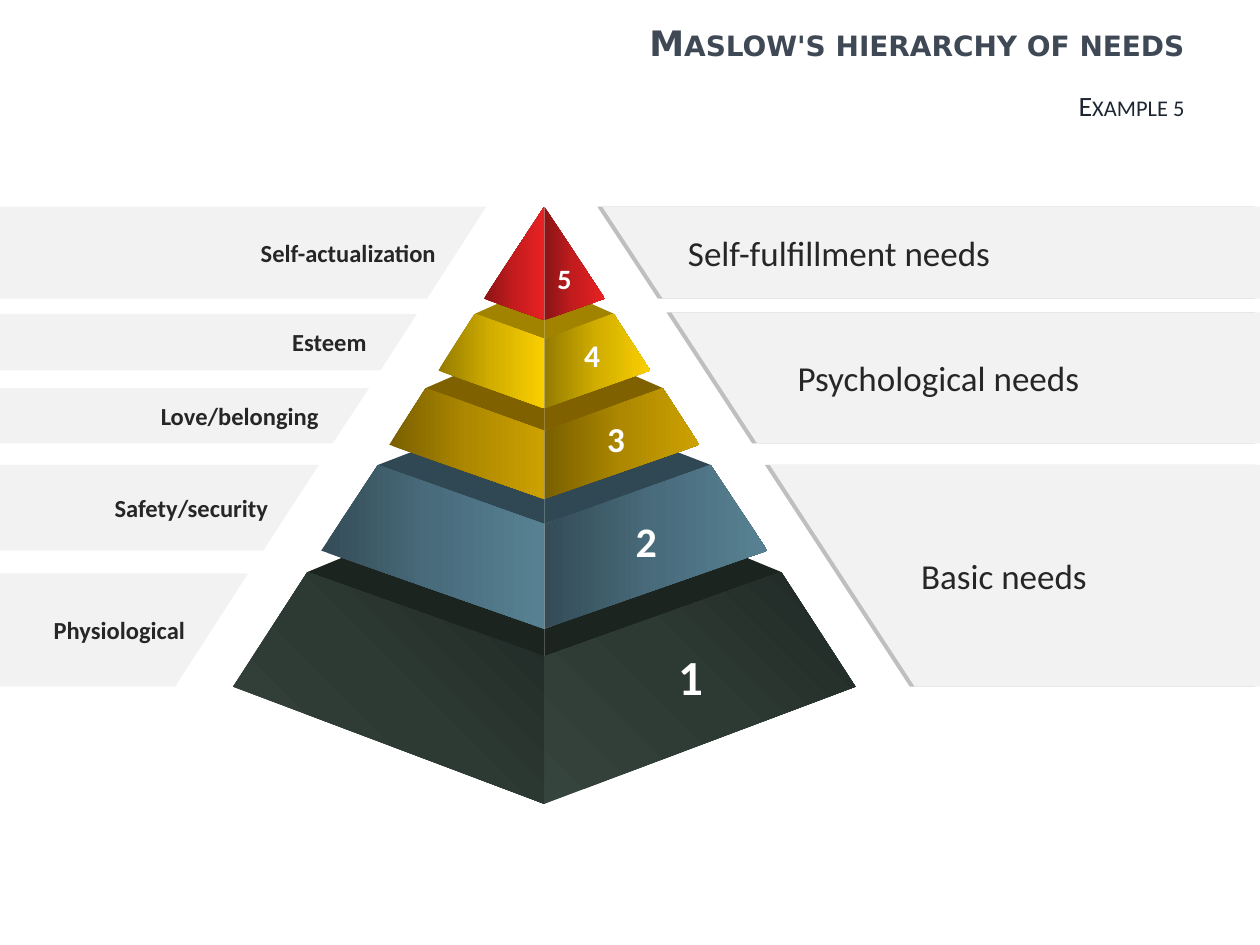
from lxml.etree import SubElement
from pptx import Presentation
from pptx.dml.color import RGBColor as Rgb
from pptx.enum.text import MSO_ANCHOR as Anchor, PP_ALIGN as Align
from pptx.oxml.ns import qn

PX = 9144
AXIS = 432
WHITE = Rgb(0xFF, 0xFF, 0xFF)
PANEL = Rgb(0xF2, 0xF2, 0xF2)
EDGE = Rgb(0xBF, 0xBF, 0xBF)
INK = Rgb(0x26, 0x26, 0x26)
TITLE = Rgb(0x3F, 0x48, 0x55)
SUBTITLE = Rgb(0x1D, 0x26, 0x31)
RED = Rgb(0x8A, 0x14, 0x15), Rgb(0xC4, 0x1C, 0x1E), Rgb(0xE9, 0x21, 0x23)
YELLOW = Rgb(0x94, 0x7B, 0x00), Rgb(0xD2, 0xAE, 0x00), Rgb(0xF9, 0xCF, 0x00)
GOLD = Rgb(0x79, 0x5F, 0x00), Rgb(0xAD, 0x88, 0x00), Rgb(0xCD, 0xA1, 0x00)
BLUE = Rgb(0x34, 0x4C, 0x57), Rgb(0x49, 0x6C, 0x7C), Rgb(0x57, 0x81, 0x93)
GREEN = Rgb(0x1F, 0x28, 0x24), Rgb(0x2D, 0x39, 0x33), Rgb(0x35, 0x44, 0x3C)
YELLOW_LID = Rgb(0xA1, 0x83, 0x00)
GOLD_LID = Rgb(0x7F, 0x61, 0x00)
BLUE_LID = Rgb(0x2F, 0x48, 0x53)
GREEN_LID = Rgb(0x1B, 0x24, 0x1F)


def write(frame, text, *, size, color, font="Calibri", bold=False,
          align=Align.LEFT, small_caps=False, left=10, right=10):
    """Fill a text frame with one formatted, vertically centred line."""
    frame.word_wrap = True
    frame.vertical_anchor = Anchor.MIDDLE
    frame.margin_left, frame.margin_right = left * PX, right * PX
    frame.margin_top = frame.margin_bottom = 5 * PX
    paragraph = frame.paragraphs[0]
    paragraph.alignment = align
    run = paragraph.add_run()
    run.text = text
    run.font.name, run.font.size, run.font.bold = font, size * 12700, bold
    run.font.color.rgb = color
    if small_caps:
        run.font._element.set("cap", "small")


class NeedsSlide:
    """Holds the slide and draws each kind of element on it."""

    def __init__(self, slide):
        self.slide = slide

    def title(self, text, box, **style):
        heading = self.slide.shapes.title
        heading.left, heading.top, heading.width, heading.height = (v * PX for v in box)
        write(heading.text_frame, text, **style)

    def label(self, text, box, **style):
        write(self.slide.shapes.add_textbox(*(v * PX for v in box)).text_frame, text, **style)

    def polygon(self, points, color=None):
        builder = self.slide.shapes.build_freeform(*points[0], scale=PX)
        builder.add_line_segments(points[1:], close=True)
        shape = builder.convert_to_shape()
        shape.shadow.inherit = False
        shape.line.fill.background()
        if color is not None:
            shape.fill.solid()
            shape.fill.fore_color.rgb = color
        return shape

    def panel(self, points, text, **style):
        write(self.polygon(points, PANEL).text_frame, text, color=INK, **style)

    def face(self, points, shades, corner_glow):
        fill = self.polygon(points).fill
        fill.gradient()
        gradient = fill._fill._gradFill
        for child in list(gradient):
            gradient.remove(child)
        stops = SubElement(gradient, qn("a:gsLst"))
        for position, shade in zip((0, 50000, 100000), shades):
            stop = SubElement(stops, qn("a:gs"), pos=str(position))
            SubElement(stop, qn("a:srgbClr"), val=str(shade))
        if corner_glow:
            way = SubElement(gradient, qn("a:path"), path="circle")
            SubElement(way, qn("a:fillToRect"), l="100000", b="100000")
        else:
            SubElement(gradient, qn("a:lin"), ang="0", scaled="0")

    def tier(self, ridge, shoulder, base, shades, lid=None, corner_glow=False):
        """Draw both faces of a tier and, given its colour, outline and ridge, the lid."""
        top, bottom = ridge
        for side in (-1, 1):
            def at(half, y):
                return AXIS + side * half, y
            if lid:
                color, back, peek = lid
                self.polygon([(AXIS, back), at(*peek), at(*shoulder), (AXIS, top)], color)
            corners = [(AXIS, top), at(*shoulder), at(*base), (AXIS, bottom)]
            self.face(corners if lid else corners[1:], shades, corner_glow)


def main():
    deck = Presentation()
    deck.slide_width, deck.slide_height = 1000 * PX, 750 * PX
    page = NeedsSlide(deck.slides.add_slide(deck.slide_layouts[5]))

    page.title("Maslow's hierarchy of needs", (319, 0, 631, 68), size=20, color=TITLE,
               font="DejaVu Sans", bold=True, align=Align.RIGHT, small_caps=True)
    page.label("Example 5", (319, 68, 631, 31), size=16, color=SUBTITLE,
               align=Align.RIGHT, small_caps=True)

    groups = [
        ("Self-fulfillment needs", 478, 526, 164, 237, 68),
        ("Psychological needs", 533, 601, 248, 352, 100),
        ("Basic needs", 611, 726, 369, 545, 120),
    ]
    for text, upper, lower, top, bottom, inset in groups:
        outline = [(upper, top), (1000, top), (1000, bottom), (lower, bottom)]
        page.polygon([(x - 4, y) for x, y in outline], EDGE)
        page.panel(outline, text, size=20, left=inset)

    needs = [
        ("Self-actualization", 386, 339, 164, 237, 40),
        ("Esteem", 331, 302, 249, 294, 40),
        ("Love/belonging", 293, 264, 308, 352, 40),
        ("Safety/security", 253, 209, 369, 437, 40),
        ("Physiological", 197, 139, 455, 545, 50),
    ]
    for text, upper, lower, top, bottom, inset in needs:
        page.panel([(0, top), (upper, top), (lower, bottom), (0, bottom)], text,
                   size=14, bold=True, align=Align.RIGHT, right=inset)

    page.tier((521, 638), (188, 454), (247, 545), GREEN,
              (GREEN_LID, 499, (159, 442)), corner_glow=True)
    page.tier((416, 499), (132, 369), (177, 437), BLUE, (BLUE_LID, 396, (106, 359)))
    page.tier((342, 396), (94, 308), (123, 353), GOLD, (GOLD_LID, 324, (71, 298)))
    page.tier((269, 324), (55, 249), (84, 294), YELLOW, (YELLOW_LID, 254, (37, 241)))
    page.tier((164, 254), (0, 164), (48, 237), RED)

    numbers = [("5", 426, 184, 73, 16), ("4", 448, 259, 45, 18), ("3", 467, 326, 44, 20),
               ("2", 491, 395, 68, 24), ("1", 526, 491, 91, 28)]
    for number, left, top, height, size in numbers:
        page.label(number, (left, top, 44, height), size=size, color=WHITE,
                   bold=True, align=Align.CENTER)

    deck.save("out.pptx")


if __name__ == "__main__":
    main()
